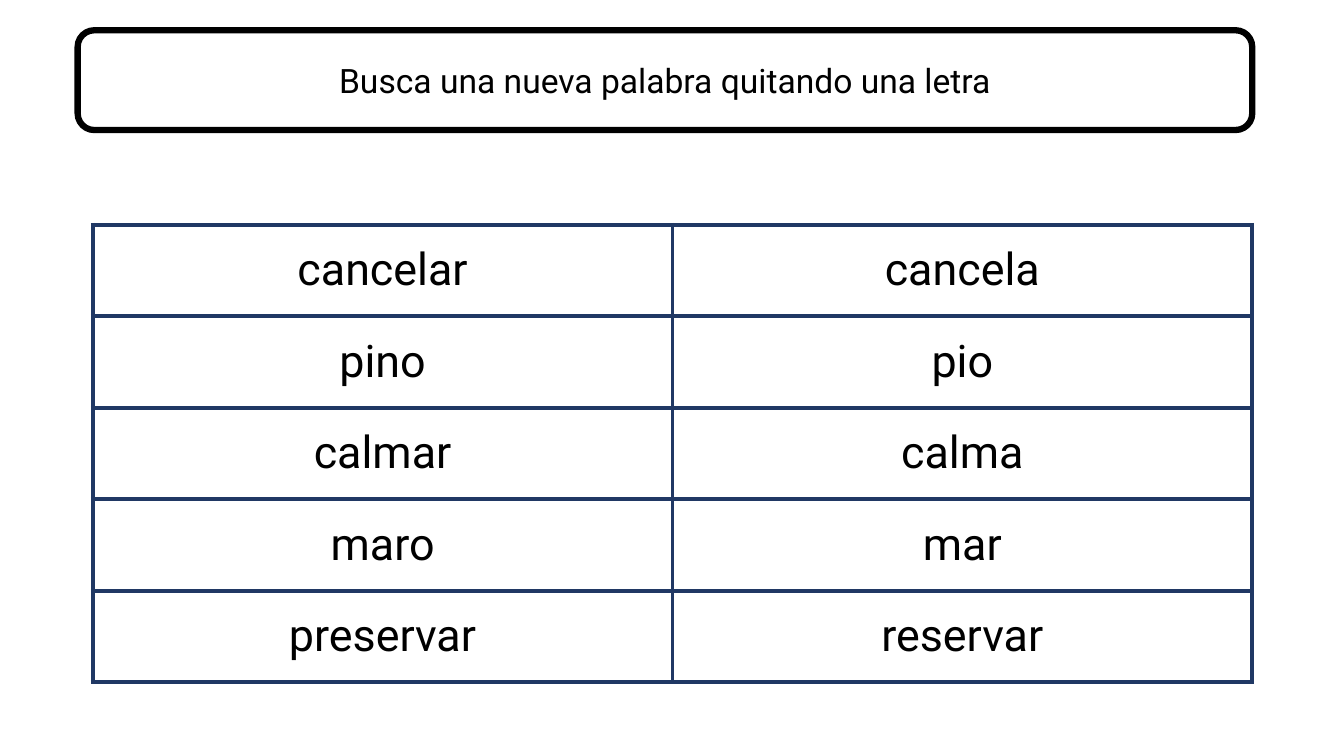
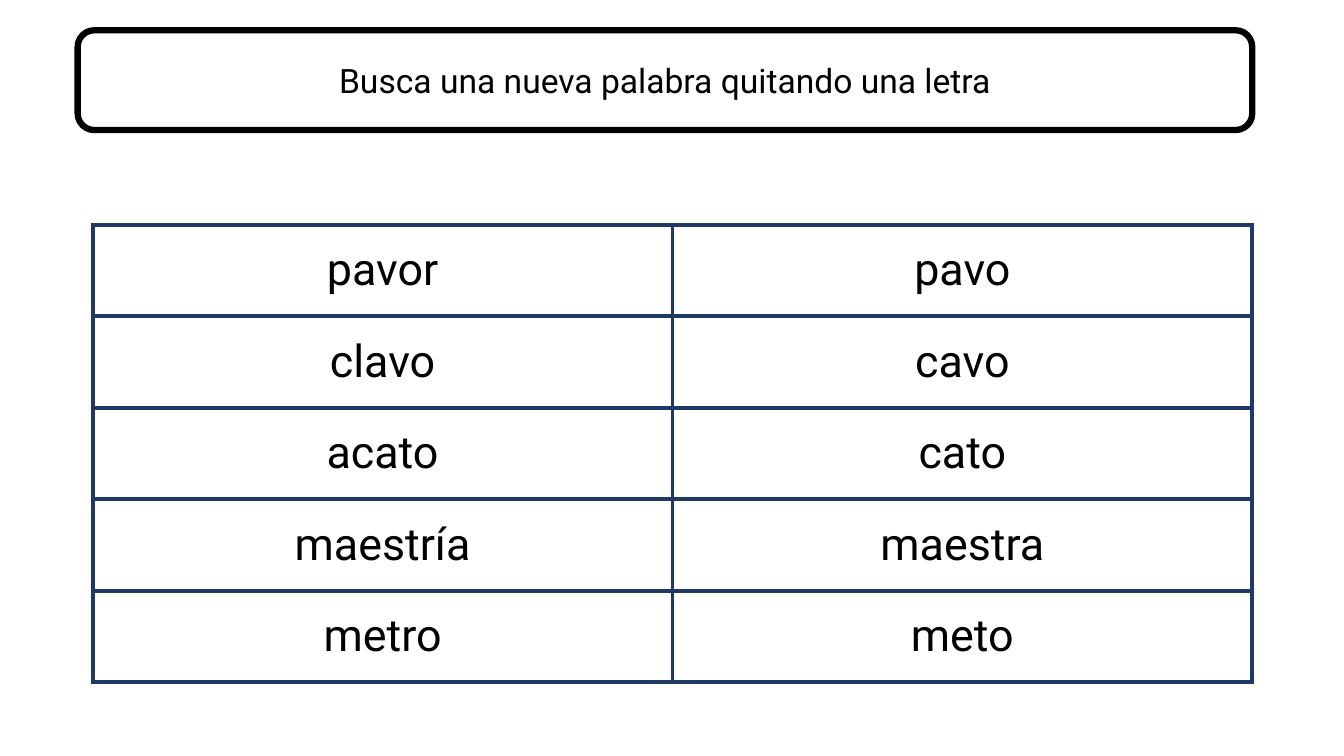
import pptx
import pptx.dml.color
import pptx.enum.shapes
import pptx.enum.text
import pptx.oxml.ns
import pptx.util
import lxml.etree

Inches = pptx.util.Inches
Pt = pptx.util.Pt

FONT = "Roboto"
BLACK = "000000"
WHITE = "FFFFFF"
NAVY = "203864"

TITLE = "Busca una nueva palabra quitando una letra"
TITLE_BOX = (0.77, 0.3, 11.65, 0.99)
TABLE_BOX = (0.92, 2.23, 11.5, 4.54)

WORD_PAIRS = [
    [
        ("cancelar", "cancela"),
        ("pino", "pio"),
        ("calmar", "calma"),
        ("maro", "mar"),
        ("preservar", "reservar"),
    ],
    [
        ("pavor", "pavo"),
        ("clavo", "cavo"),
        ("acato", "cato"),
        ("maestría", "maestra"),
        ("metro", "meto"),
    ],
]


def color(hex_string):
    return pptx.dml.color.RGBColor.from_string(hex_string)


def set_fill(target, hex_string):
    target.fill.solid()
    target.fill.fore_color.rgb = color(hex_string)


def write_text(text_frame, text, size, hex_string=BLACK, font=FONT):
    paragraph = text_frame.paragraphs[0]
    paragraph.alignment = pptx.enum.text.PP_ALIGN.CENTER
    run = paragraph.add_run()
    run.text = text
    run.font.size = Pt(size)
    run.font.name = font
    run.font.color.rgb = color(hex_string)


def set_borders(cell, hex_string, width):
    qn = pptx.oxml.ns.qn
    properties = cell._tc.get_or_add_tcPr()
    for side in ("a:lnL", "a:lnR", "a:lnT", "a:lnB"):
        line = lxml.etree.SubElement(properties, qn(side), w=str(Pt(width)))
        fill = lxml.etree.SubElement(line, qn("a:solidFill"))
        lxml.etree.SubElement(fill, qn("a:srgbClr"), val=hex_string)


def add_title(slide, box):
    shape = slide.shapes.add_shape(
        pptx.enum.shapes.MSO_SHAPE.ROUNDED_RECTANGLE, *map(Inches, box)
    )
    shape.shadow.inherit = False
    set_fill(shape, WHITE)
    shape.line.color.rgb = color(BLACK)
    shape.line.width = Pt(4.5)
    shape.text_frame.word_wrap = True
    shape.text_frame.vertical_anchor = pptx.enum.text.MSO_ANCHOR.MIDDLE
    write_text(shape.text_frame, TITLE, size=24)


def add_word_table(slide, box, pairs):
    frame = slide.shapes.add_table(len(pairs), len(pairs[0]), *map(Inches, box))
    table = frame.table
    table.first_row = False
    table.horz_banding = False
    for row_index, words in enumerate(pairs):
        for column_index, word in enumerate(words):
            cell = table.cell(row_index, column_index)
            set_borders(cell, NAVY, width=3)
            set_fill(cell, WHITE)
            cell.vertical_anchor = pptx.enum.text.MSO_ANCHOR.MIDDLE
            write_text(cell.text_frame, word, size=32)


def add_word_slide(presentation, pairs):
    slide = presentation.slides.add_slide(presentation.slide_layouts[6])
    add_title(slide, TITLE_BOX)
    add_word_table(slide, TABLE_BOX, pairs)


def main():
    presentation = pptx.Presentation()
    presentation.slide_width = Inches(13.33)
    presentation.slide_height = Inches(7.5)
    for pairs in WORD_PAIRS:
        add_word_slide(presentation, pairs)
    presentation.save("out.pptx")


if __name__ == "__main__":
    main()
